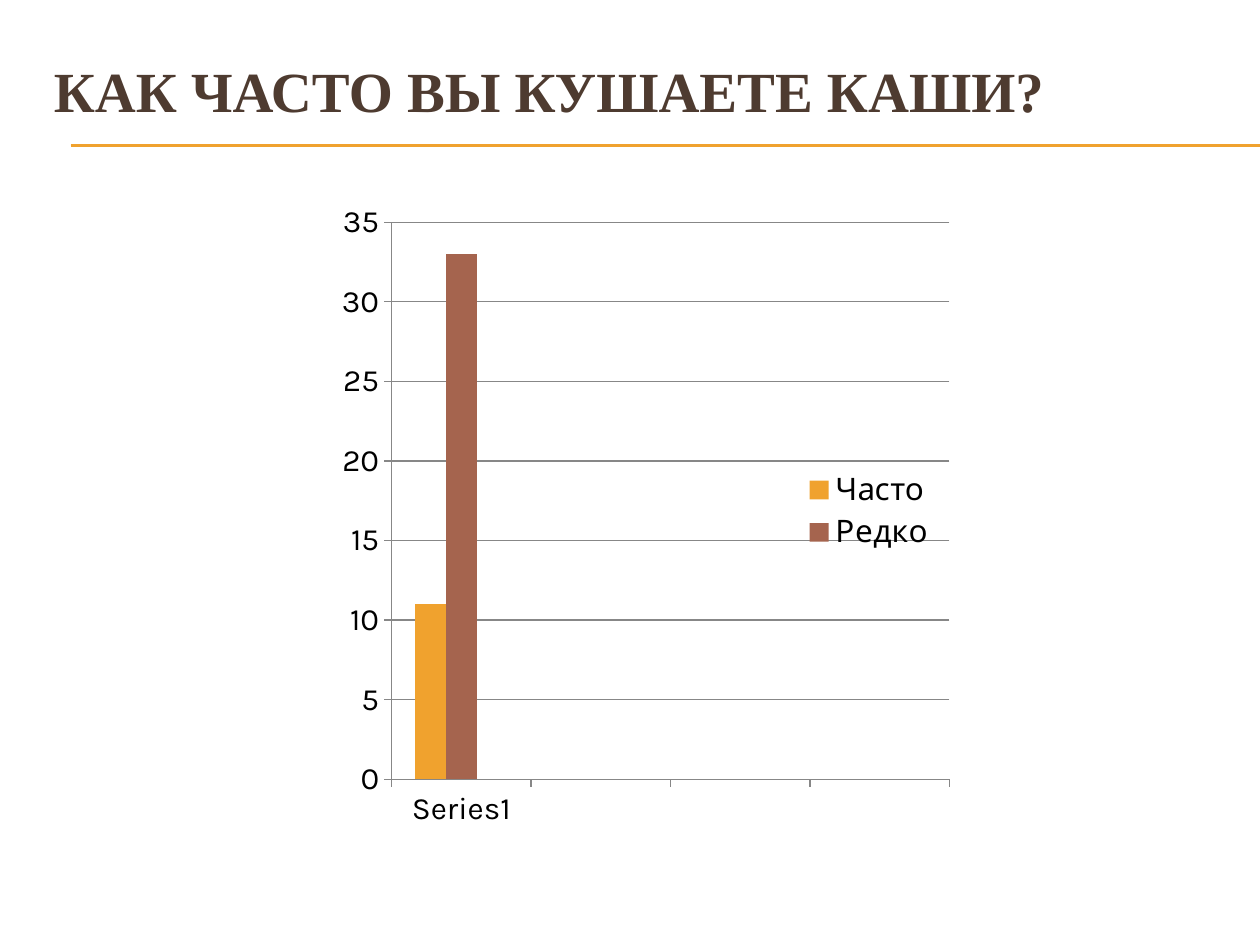
from dataclasses import dataclass

from lxml import etree
from pptx import Presentation
from pptx.chart.data import CategoryChartData
from pptx.dml.color import RGBColor
from pptx.enum.chart import XL_CHART_TYPE, XL_LEGEND_POSITION, XL_TICK_MARK
from pptx.enum.shapes import MSO_CONNECTOR
from pptx.enum.text import MSO_ANCHOR
from pptx.oxml import parse_xml
from pptx.oxml.ns import nsdecls, qn
from pptx.util import Inches, Pt

COLUMNS = XL_CHART_TYPE.COLUMN_CLUSTERED
LEGEND_RIGHT = XL_LEGEND_POSITION.RIGHT
TICK_OUTSIDE = XL_TICK_MARK.OUTSIDE
STRAIGHT = MSO_CONNECTOR.STRAIGHT
MIDDLE = MSO_ANCHOR.MIDDLE


@dataclass(frozen=True)
class Theme:
    title_font: str = "Times New Roman"
    chart_font: str = "Karla"
    title_size: float = 32.4
    chart_size: float = 18
    title: str = "4E3B30"
    text: str = "000000"
    rule: str = "F0A22E"
    grid: str = "878787"
    series: tuple = ("F0A22E", "A5644E", "B58B80")


THEME = Theme()
CATEGORIES = ["Series1", "", "", ""]
ANSWERS = {"Часто": 11, "Редко": 33, "Series 3": None}
UNUSED_SERIES = 2
PLOT_AREA = {"x": 0.29, "y": 0.029, "w": 0.71, "h": 0.908}


def style_font(font, name, size, color):
    font.name = name
    font.size = Pt(size)
    font.color.rgb = RGBColor.from_string(color)


def style_line(line, color):
    line.color.rgb = RGBColor.from_string(color)
    line.width = Pt(0.75)


def add_rule(slide, y):
    rule = slide.shapes.add_connector(
        STRAIGHT, Inches(0.56), Inches(y), Inches(10), Inches(y))
    style_line(rule.line, THEME.rule)
    etree.SubElement(rule._element.spPr, qn("a:effectLst"))


def add_title(slide, wording):
    title = slide.shapes.add_textbox(
        Inches(0.33), Inches(0.5), Inches(9.5), Inches(0.92))
    frame = title.text_frame
    frame.word_wrap = True
    frame.vertical_anchor = MIDDLE
    # The deep bottom inset lifts the single line clear of the rules
    frame.margin_top, frame.margin_bottom = 0, Inches(0.5)
    run = frame.paragraphs[0].add_run()
    run.text = wording
    style_font(run.font, THEME.title_font, THEME.title_size, THEME.title)
    run.font.bold = True


def place_plot(chart):
    plot_area = chart._chartSpace.chart.plotArea
    for layout in plot_area.findall(qn("c:layout")):
        plot_area.remove(layout)
    sizes = "".join(f'<c:{side} val="{part}"/>' for side, part in PLOT_AREA.items())
    plot_area.insert(0, parse_xml(
        f'<c:layout {nsdecls("c")}><c:manualLayout>'
        '<c:layoutTarget val="inner"/><c:xMode val="edge"/><c:yMode val="edge"/>'
        f'{sizes}</c:manualLayout></c:layout>'))


def add_legend(chart):
    chart.has_legend = True
    legend = chart.legend
    legend.position = LEGEND_RIGHT
    legend.include_in_layout = True
    style_font(legend.font, THEME.chart_font, THEME.chart_size, THEME.text)
    # Hide the entry of the series without values
    legend._element.find(qn("c:legendPos")).addnext(parse_xml(
        f'<c:legendEntry {nsdecls("c")}><c:idx val="{UNUSED_SERIES}"/>'
        '<c:delete val="1"/></c:legendEntry>'))


def add_answer_chart(slide):
    answers = CategoryChartData()
    answers.categories = CATEGORIES
    for name, count in ANSWERS.items():
        answers.add_series(name, [count] + [None] * (len(CATEGORIES) - 1))
    chart = slide.shapes.add_chart(
        COLUMNS, Inches(1.3), Inches(1.62), Inches(6.24), Inches(4.95),
        answers).chart
    chart.has_title = False
    style_font(chart.font, THEME.chart_font, THEME.chart_size, THEME.text)

    # Columns
    columns = chart.plots[0]
    columns.gap_width = 150
    columns.overlap = 0
    columns.vary_by_categories = False
    for series, color in zip(columns.series, THEME.series):
        series.format.fill.solid()
        series.format.fill.fore_color.rgb = RGBColor.from_string(color)

    # Axes and gridlines
    for axis in (chart.category_axis, chart.value_axis):
        axis.major_tick_mark = TICK_OUTSIDE
        style_line(axis.format.line, THEME.grid)
    counts = chart.value_axis
    counts.minimum_scale, counts.maximum_scale, counts.major_unit = 0, 35, 5
    counts.has_major_gridlines = True
    style_line(counts.major_gridlines.format.line, THEME.grid)

    place_plot(chart)
    add_legend(chart)


def main():
    deck = Presentation()
    deck.slide_width, deck.slide_height = Inches(10), Inches(7.5)
    slide = deck.slides.add_slide(deck.slide_layouts[6])
    for y in (1.15, 1.16):
        add_rule(slide, y)
    add_title(slide, "КАК ЧАСТО ВЫ КУШАЕТЕ КАШИ?")
    add_answer_chart(slide)
    deck.save("out.pptx")


if __name__ == "__main__":
    main()
